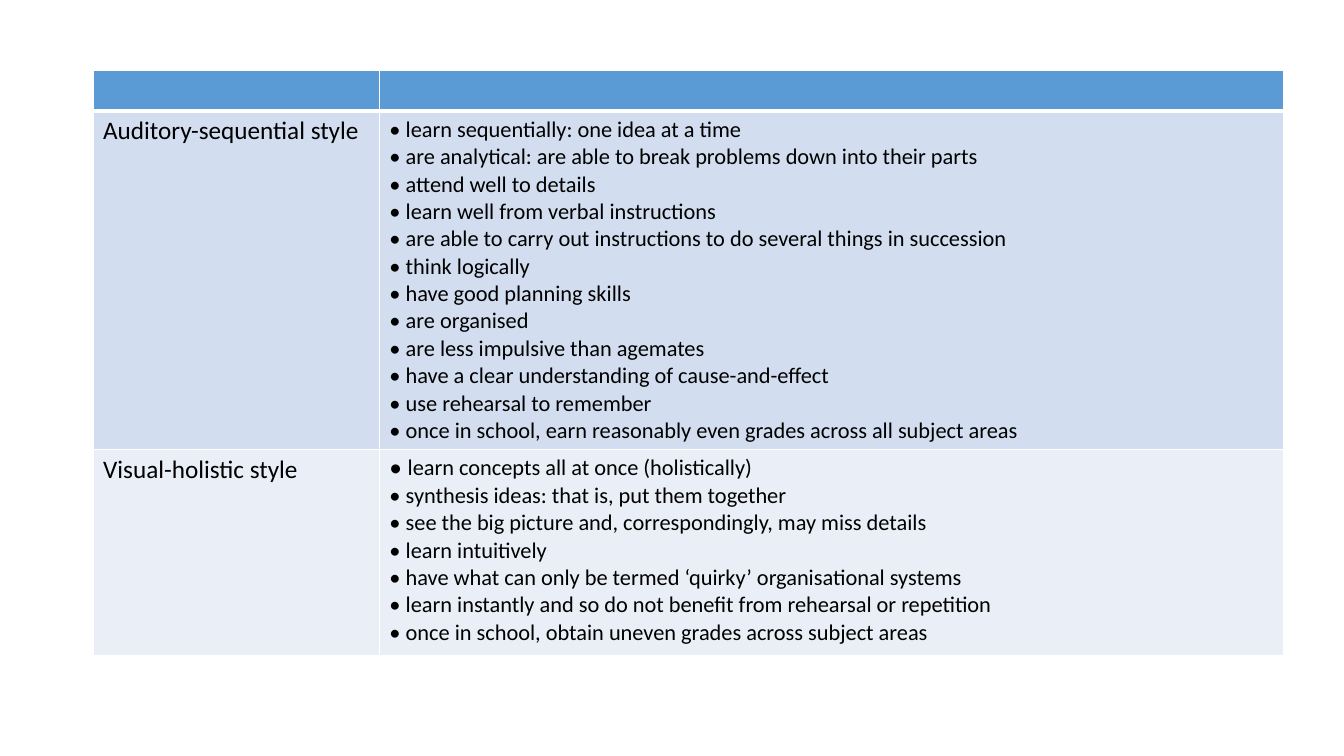
from lxml import etree
from pptx import Presentation
from pptx.dml.color import RGBColor
from pptx.oxml.ns import qn
from pptx.util import Pt

FONT = "Calibri"
HEADER_FILL = "5B9BD5"
BORDER_COLOR = "FFFFFF"
TEXT_COLOR = "000000"
LABEL_SIZE = 18
TRAIT_SIZE = 16
BULLET_WIDTH = 0.724

STYLES = [
    {
        "label": "Auditory-sequential style",
        "fill": "D2DEEF",
        "first_bullet": 16,
        "traits": [
            "learn sequentially: one idea at a time",
            "are analytical: are able to break problems down into their parts",
            "attend well to details",
            "learn well from verbal instructions",
            "are able to carry out instructions to do several things in succession",
            "think logically",
            "have good planning skills",
            "are organised",
            "are less impulsive than agemates",
            "have a clear understanding of cause-and-effect",
            "use rehearsal to remember",
            "once in school, earn reasonably even grades across all subject areas",
        ],
    },
    {
        "label": "Visual-holistic style",
        "fill": "EAEFF7",
        "first_bullet": 18,
        "traits": [
            "learn concepts all at once (holistically)",
            "synthesis ideas: that is, put them together",
            "see the big picture and, correspondingly, may miss details",
            "learn intuitively",
            "have what can only be termed ‘quirky’ organisational systems",
            "learn instantly and so do not benefit from rehearsal or repetition",
            "once in school, obtain uneven grades across subject areas",
        ],
    },
]

LEFT, TOP = 66.5, 50
COLUMN_WIDTHS = [204.5, 646]
ROW_HEIGHTS = [29, 241.5, 147]


def color(hex_text):
    return RGBColor.from_string(hex_text)


def style_cell(cell, fill, top_width, bottom_width):
    properties = cell._tc.get_or_add_tcPr()
    for side, width in (("L", 1), ("R", 1), ("T", top_width), ("B", bottom_width)):
        line = etree.SubElement(properties, qn(f"a:ln{side}"), w=str(Pt(width)))
        solid = etree.SubElement(line, qn("a:solidFill"))
        etree.SubElement(solid, qn("a:srgbClr"), val=BORDER_COLOR)
    cell.fill.solid()
    cell.fill.fore_color.rgb = color(fill)


def format_text(paragraph, size):
    for run in paragraph.runs:
        run.font.name = FONT
        run.font.size = Pt(size)
        run.font.color.rgb = color(TEXT_COLOR)


def add_bullet(paragraph, bullet_size):
    properties = paragraph._p.get_or_add_pPr()
    indent = Pt(BULLET_WIDTH * bullet_size)
    properties.set("marL", str(indent))
    properties.set("indent", str(-indent))
    percent = round(bullet_size / TRAIT_SIZE * 100000)
    etree.SubElement(properties, qn("a:buSzPct"), val=str(percent))
    etree.SubElement(properties, qn("a:buFont"), typeface=FONT)
    etree.SubElement(properties, qn("a:buChar"), char="•")


def fill_style_row(label_cell, traits_cell, style):
    label_cell.text_frame.text = style["label"]
    format_text(label_cell.text_frame.paragraphs[0], LABEL_SIZE)
    traits_cell.text_frame.text = "\n".join(style["traits"])
    for index, paragraph in enumerate(traits_cell.text_frame.paragraphs):
        format_text(paragraph, TRAIT_SIZE)
        add_bullet(paragraph, TRAIT_SIZE if index else style["first_bullet"])


def main():
    presentation = Presentation()
    presentation.slide_width = Pt(960)
    presentation.slide_height = Pt(540)
    slide = presentation.slides.add_slide(presentation.slide_layouts[6])
    table = slide.shapes.add_table(
        len(ROW_HEIGHTS), len(COLUMN_WIDTHS), Pt(LEFT), Pt(TOP),
        Pt(sum(COLUMN_WIDTHS)), Pt(sum(ROW_HEIGHTS))).table
    for column, width in zip(table.columns, COLUMN_WIDTHS):
        column.width = Pt(width)
    row_fills = [HEADER_FILL] + [style["fill"] for style in STYLES]
    for index, row in enumerate(table.rows):
        row.height = Pt(ROW_HEIGHTS[index])
        for cell in row.cells:
            style_cell(cell, row_fills[index],
                       3 if index == 1 else 1, 3 if index == 0 else 1)
    for index, style in enumerate(STYLES, start=1):
        fill_style_row(table.cell(index, 0), table.cell(index, 1), style)
    presentation.save("out.pptx")


if __name__ == "__main__":
    main()
